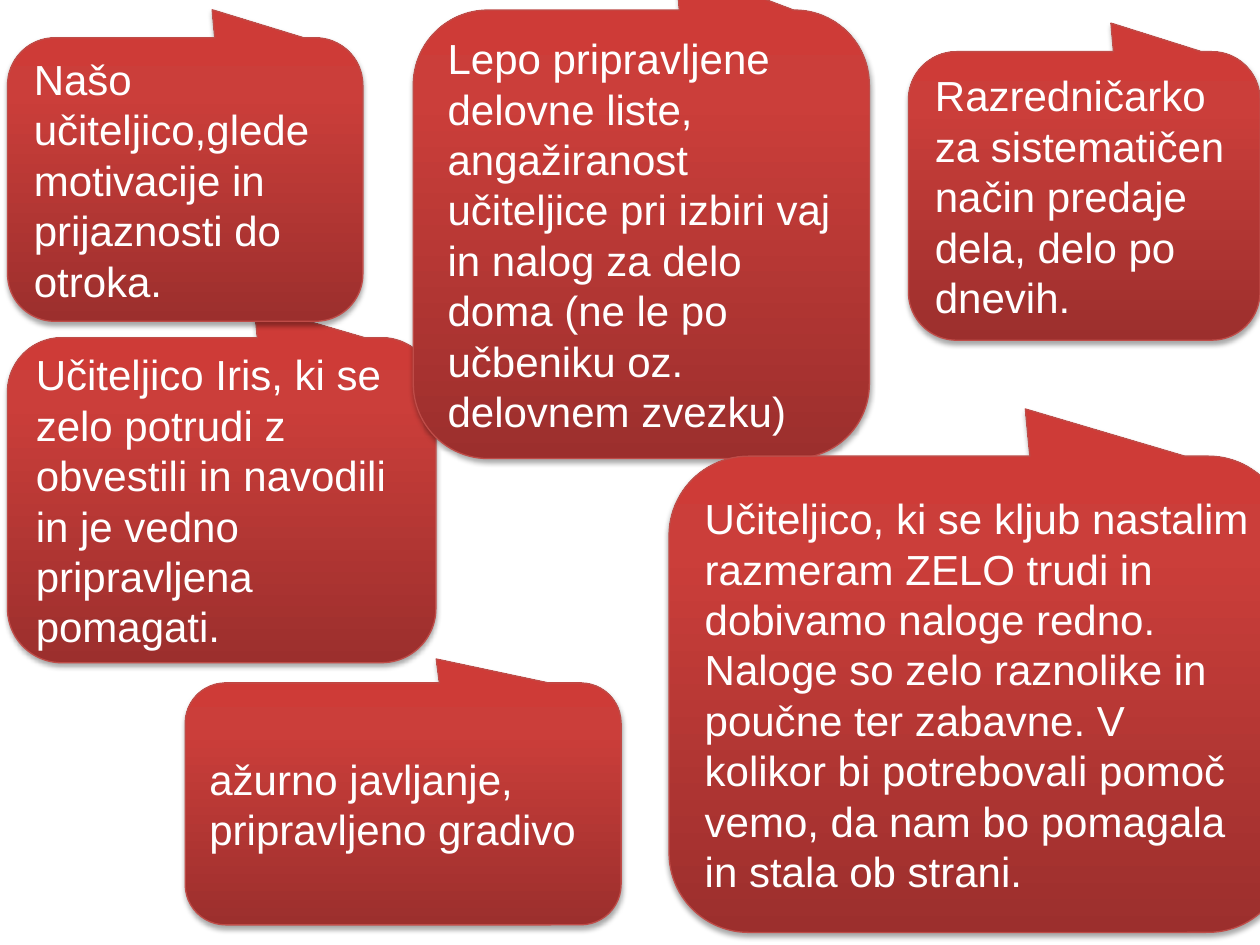
from lxml.etree import SubElement
from pptx import Presentation
from pptx.dml.color import RGBColor as RGB
from pptx.enum.shapes import MSO_SHAPE as SHAPE
from pptx.enum.text import MSO_ANCHOR as ANCHOR, PP_ALIGN as ALIGN
from pptx.oxml.ns import qn
from pptx.util import Inches, Pt

COLORS = {"dark": "9C2F2D", "mid": "CB3E3A", "bright": "CE3B37",
          "line": "BF4C48", "text": "FFFFFF", "shadow": "000000"}
GRADIENT = [(0, "dark"), (80, "mid"), (100, "bright")]
CALLOUT_ADJ = (0.076, -0.599, 0.167)  # tail tip x, tail tip y, corner radius

# Left, top, width, height in inches, then the quote; back to front
QUOTES = [
    (0.06, 2.68, 3.4, 2.58, "Učiteljico Iris, ki se zelo potrudi z obvestili in "
     "navodili in je vedno pripravljena pomagati."),
    (3.28, 0.08, 3.62, 3.56, "Lepo pripravljene delovne liste, angažiranost "
     "učiteljice pri izbiri vaj in nalog za delo doma (ne le po učbeniku oz. "
     "delovnem zvezku)"),
    (0.06, 0.3, 2.82, 2.25, "Našo učiteljico,glede motivacije in prijaznosti do "
     "otroka."),
    (1.47, 5.42, 3.46, 1.92, "ažurno javljanje, pripravljeno gradivo"),
    (7.21, 0.41, 2.79, 2.29, "Razredničarko za sistematičen način predaje dela, "
     "delo po dnevih."),
    (5.31, 3.62, 4.91, 3.78, "Učiteljico, ki se kljub nastalim razmeram ZELO trudi "
     "in dobivamo naloge redno. Naloge so zelo raznolike in poučne ter zabavne. V "
     "kolikor bi potrebovali pomoč vemo, da nam bo pomagala in stala ob strani."),
]


def add_color(parent, name):
    return SubElement(parent, qn("a:srgbClr"), val=COLORS[name])


def fill_gradient(sp):
    sp.fill.gradient()
    sp.fill.gradient_angle = 90
    stops = sp.element.spPr.find(qn("a:gradFill")).find(qn("a:gsLst"))
    for stop in list(stops):
        stops.remove(stop)
    for pos, name in GRADIENT:
        add_color(SubElement(stops, qn("a:gs"), pos=str(pos * 1000)), name)


def add_shadow(sp, blur=3.1, distance=1.8, opacity=35):
    sp.shadow.inherit = False
    effects = sp.element.spPr.find(qn("a:effectLst"))
    outer = SubElement(effects, qn("a:outerShdw"), blurRad=str(Pt(blur)),
                       dist=str(Pt(distance)), dir="5400000", rotWithShape="0")
    SubElement(add_color(outer, "shadow"), qn("a:alpha"), val=str(opacity * 1000))


def set_text(sp, text, size=24, font="Arial", color="text", align=ALIGN.LEFT):
    tf = sp.text_frame
    tf.word_wrap = True
    tf.vertical_anchor = ANCHOR.MIDDLE
    p = tf.paragraphs[0]
    p.alignment = align
    r = p.add_run()
    r.text = text
    r.font.size = Pt(size)
    r.font.name = font
    r.font.color.rgb = RGB.from_string(COLORS[color])


def add_callout(s, left, top, width, height, text):
    sp = s.shapes.add_shape(SHAPE.ROUNDED_RECTANGULAR_CALLOUT, Inches(left),
                            Inches(top), Inches(width), Inches(height))
    for i, value in enumerate(CALLOUT_ADJ):
        sp.adjustments[i] = value
    fill_gradient(sp)
    sp.line.color.rgb = RGB.from_string(COLORS["line"])
    sp.line.width = Pt(0.75)
    add_shadow(sp)
    set_text(sp, text)


def main():
    prs = Presentation()
    prs.slide_width, prs.slide_height = Inches(10), Inches(7.5)
    s = prs.slides.add_slide(prs.slide_layouts[6])
    # Speech bubbles with the parents' praise
    for quote in QUOTES:
        add_callout(s, *quote)
    prs.save("out.pptx")


if __name__ == "__main__":
    main()
